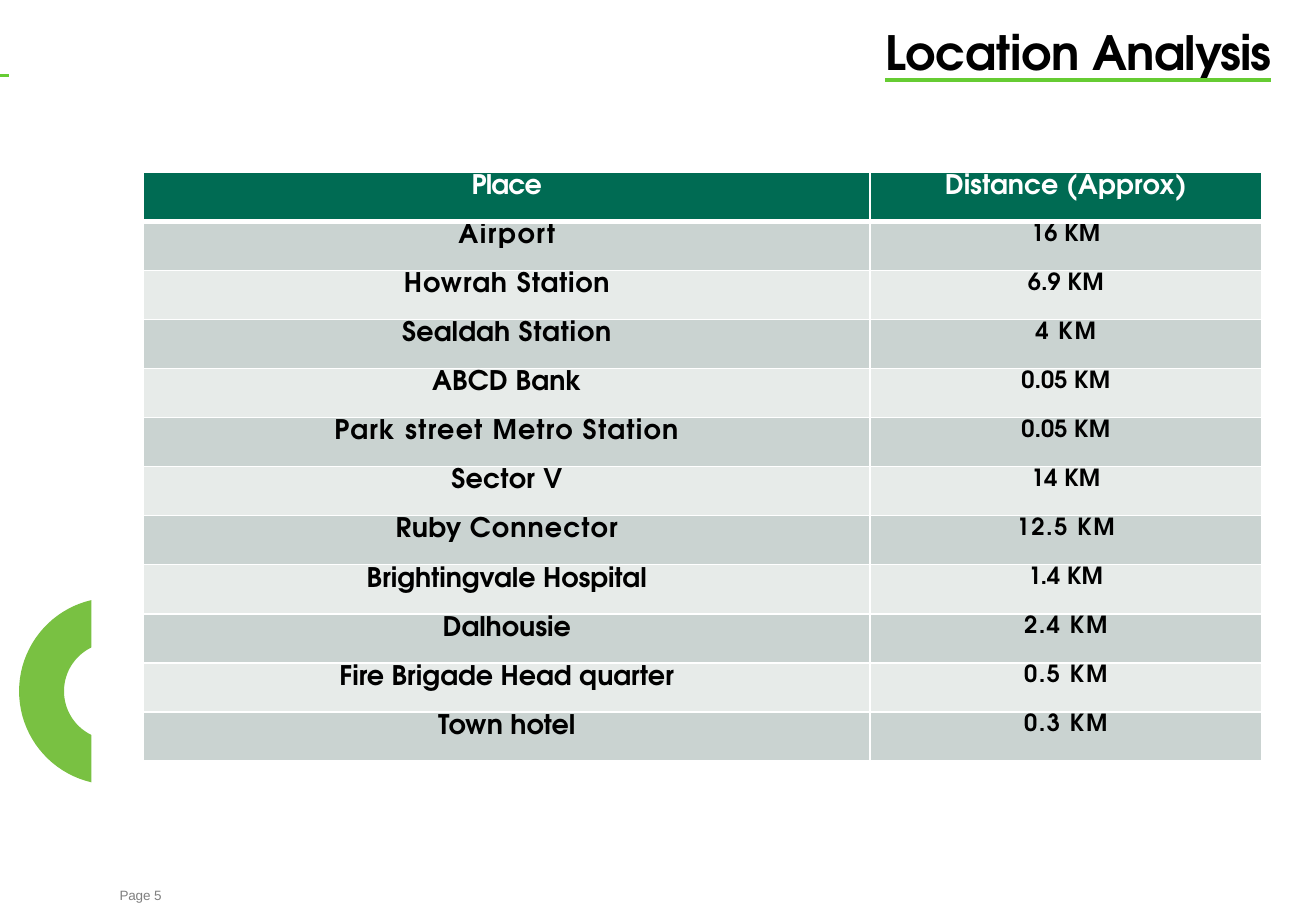
from math import acos, cos, sin

from lxml import etree
from pptx import Presentation
from pptx.dml.color import RGBColor as RGB
from pptx.enum.text import MSO_ANCHOR as ANCHOR, MSO_AUTO_SIZE as AUTO, PP_ALIGN as ALIGN
from pptx.oxml.ns import qn
from pptx.util import Cm, Pt

COLORS = {
    "white": "FFFFFF", "black": "000000", "grey": "808080",
    "ring": "79C142", "underline": "66CC33",
    "header": "006B53", "odd": "CAD3D1", "even": "E7EBE9",
}
HEAD_FONT, BASE_FONT = "TeX Gyre Adventor", "Arial"

# Each cell: runs of (text, letter spacing in points)
HEADER = ([("Place", -0.5)], [("Distance ", 0), ("(Approx", 0.2), (")", -0.3)])
PLACES = [
    ([("Airport", 1)], [("16 KM", 0)]),
    ([("Howrah ", 0.6), ("Station", 0.5)], [("6.9 KM", 0)]),
    ([("Sealdah ", 0.1), ("Station", 0.5)], [("4 KM", 0.9)]),
    ([("ABCD Bank", 0.1)], [("0.05 KM", 0)]),
    ([("Park street Metro Station", 0.8)], [("0.05 KM", 0)]),
    ([("Sector ", 0.2), ("V", -0.2)], [("14 KM", 0)]),
    ([("Ruby ", 0.2), ("Connector", 0.7)], [("12.5 KM", 0.9)]),
    ([("Brightingvale Hospital", 0)], [("1.4 KM", 0)]),
    ([("Dalhousie", 0)], [("2.4 KM", 0.9)]),
    ([("Fire Brigade Head quarter", 0)], [("0.5 KM", 0.9)]),
    ([("Town hotel", 0)], [("0.3 KM", 0.9)]),
]


def rgb(name):
    return RGB.from_string(COLORS[name])


def sub(parent, tag, **attrs):
    return etree.SubElement(parent, qn(tag), attrs)


def add_run(p, text, size, color, font=HEAD_FONT, bold=True, spacing=0):
    r = p.add_run()
    r.text = text
    r.font.size, r.font.bold, r.font.name = Pt(size), bold, font
    r.font.color.rgb = rgb(color)
    r.font._element.set("spc", str(round(spacing * 100)))
    return r


def set_frame(tf, top=0):
    tf.margin_left = tf.margin_right = tf.margin_bottom = 0
    tf.margin_top = top
    tf.word_wrap = True
    tf.vertical_anchor = ANCHOR.TOP


def add_title(slide, x, y, w, h):
    sp = slide.shapes.title
    sp.left, sp.top, sp.width, sp.height = x, y, w, h
    tf = sp.text_frame
    set_frame(tf, Cm(0.03))
    tf.auto_size = AUTO.SHAPE_TO_FIT_TEXT
    p = tf.paragraphs[0]
    p.alignment = ALIGN.LEFT
    tabs = sub(p._p.get_or_add_pPr(), "a:tabLst")
    sub(tabs, "a:tab", pos=str(Cm(18.59)), algn="l")
    # The tab carries the title to the right; the underlined space marks the left edge
    for text, font, spacing in ((" \t", BASE_FONT, 1.1), ("Location", HEAD_FONT, -0.2),
                                (" ", HEAD_FONT, 0.1), ("Analysis", HEAD_FONT, -0.5)):
        r = add_run(p, text, 28, "black", font, spacing=spacing)
        r.font.underline = True
        u_fill = etree.Element(qn("a:uFill"))
        sub(sub(u_fill, "a:solidFill"), "a:srgbClr", val=COLORS["underline"])
        r.font._element.find(qn("a:latin")).addprevious(u_fill)


def add_ring(slide, x, y, w, h):
    """Left part of a ring, cut off by the right side of the box."""
    outer = (w * w + h * h / 4) / (2 * w)
    inner, cx, cy = outer * 0.52, x + outer, y + h / 2
    steps = 40

    def arc(radius):
        half = acos((cx - x - w) / radius)
        angles = [half * (1 - 2 * i / steps) for i in range(steps + 1)]
        return [(round(cx - radius * cos(a)), round(cy - radius * sin(a))) for a in angles]

    points = arc(outer) + arc(inner)[::-1]
    builder = slide.shapes.build_freeform(*points[0])
    builder.add_line_segments(points[1:], close=True)
    sp = builder.convert_to_shape()
    sp.shadow.inherit = False
    sp.fill.solid()
    sp.fill.fore_color.rgb = rgb("ring")
    sp.line.fill.background()


def style_cell(cell, runs, size, color, fill, top_line=1, bottom_line=1):
    cell.margin_left = cell.margin_right = cell.margin_bottom = 0
    cell.margin_top = Cm(0.05)
    cell.vertical_anchor = ANCHOR.TOP
    p = cell.text_frame.paragraphs[0]
    p.alignment = ALIGN.CENTER
    for text, spacing in runs:
        add_run(p, text, size, color, spacing=spacing)
    # Borders come before the fill in the cell properties
    for side, width in (("L", 1), ("R", 1), ("T", top_line), ("B", bottom_line)):
        ln = sub(cell._tc.get_or_add_tcPr(), f"a:ln{side}", w=str(Pt(width)))
        sub(sub(ln, "a:solidFill"), "a:srgbClr", val=COLORS["white"])
    cell.fill.solid()
    cell.fill.fore_color.rgb = rgb(fill)


def add_distances(slide, x, y, w, h):
    table = slide.shapes.add_table(len(PLACES) + 1, 2, x, y, w, h).table
    table.columns[0].width = round(w * 0.65)
    table.columns[1].width = w - table.columns[0].width
    for col, runs in enumerate(HEADER):
        style_cell(table.cell(0, col), runs, 16, "white", "header", bottom_line=3)
    for row, cells in enumerate(PLACES, 1):
        for col, runs in enumerate(cells):
            style_cell(table.cell(row, col), runs, (16, 14)[col], "black",
                       "odd" if row % 2 else "even", top_line=3 if row == 1 else 1)


def add_page_number(slide, x, y, w, h):
    tf = slide.shapes.add_textbox(x, y, w, h).text_frame
    set_frame(tf)
    p = tf.paragraphs[0]
    add_run(p, "Page ", 8, "grey", BASE_FONT, bold=False, spacing=-0.1)
    add_run(p, "5", 8, "grey", BASE_FONT, bold=False)


def main():
    prs = Presentation()
    prs.slide_width, prs.slide_height = Cm(27.51), Cm(19.05)
    slide = prs.slides.add_slide(prs.slide_layouts[5])
    add_ring(slide, Cm(0.4), Cm(12.55), Cm(1.51), Cm(3.81))
    add_title(slide, Cm(-0.08), Cm(0.46), Cm(27.66), Cm(1.24))
    add_page_number(slide, Cm(2.5), Cm(18.55), Cm(1.02), Cm(0.38))
    add_distances(slide, Cm(3), Cm(3.61), Cm(23.37), Cm(12.31))
    prs.save("out.pptx")


if __name__ == "__main__":
    main()
